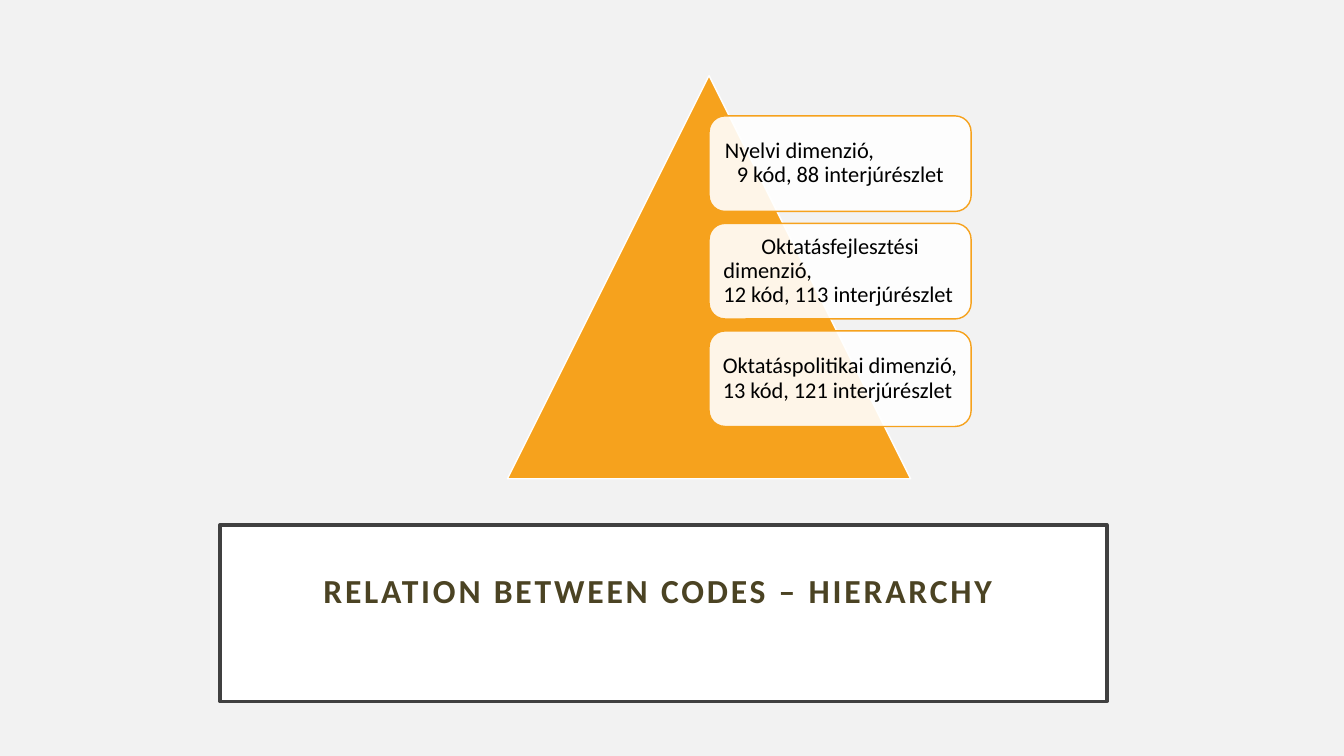
from lxml import etree
from pptx import Presentation
from pptx.dml.color import RGBColor
from pptx.enum.shapes import MSO_SHAPE
from pptx.enum.text import MSO_ANCHOR, MSO_AUTO_SIZE, PP_ALIGN
from pptx.oxml.ns import qn
from pptx.util import Pt

TRIANGLE, RECT, ROUNDED = MSO_SHAPE.ISOSCELES_TRIANGLE, MSO_SHAPE.RECTANGLE, MSO_SHAPE.ROUNDED_RECTANGLE
MIDDLE, NO_FIT = MSO_ANCHOR.MIDDLE, MSO_AUTO_SIZE.NONE
LEFT, CENTER = PP_ALIGN.LEFT, PP_ALIGN.CENTER

TITLE = "RELATION BETWEEN CODES – HIERARCHY"
DIMENSIONS = [
    {"lines": ["Nyelvi dimenzió,", "9 kód, 88 interjúrészlet"], "margin": 11.5, "indent": -8.5},
    {"lines": ["Oktatásfejlesztési", "dimenzió,", "12 kód, 113 interjúrészlet"], "margin": 2, "indent": 27},
    {"lines": ["Oktatáspolitikai dimenzió,", "13 kód, 121 interjúrészlet"], "margin": 1.5, "indent": 0},
]

THEME = {
    "font": "Calibri", "title_size": 24, "card_size": 16,
    "background": "F2F2F2", "white": "FFFFFF", "accent": "F6A21D",
    "frame": "404040", "title": "4B4323", "text": "000000",
}
SLIDE_W, SLIDE_H = 960, 540
TITLE_BOX = (157, 375, 633.6, 126)
TRIANGLE_BOX = (362.5, 54, 288, 288)
CARD_W, CARD_H, CARD_GAP = 187.2, 68.25, 8.55
CARD_LEFT = TRIANGLE_BOX[0] + TRIANGLE_BOX[2] / 2
CARD_TOP = 82.8


def color(name):
    return RGBColor.from_string(THEME[name])


def apply(obj, values):
    for name, value in values.items():
        setattr(obj, name, value)


def paint(sp, fill, line, width):
    sp.fill.solid()
    sp.fill.fore_color.rgb = color(fill)
    sp.line.color.rgb = color(line)
    sp.line.width = Pt(width)


def write(sp, text, align, size, ink, insets, bold=False):
    tf = sp.text_frame
    apply(tf, {"word_wrap": True, "auto_size": NO_FIT, "vertical_anchor": MIDDLE})
    sides = ("margin_left", "margin_top", "margin_right", "margin_bottom")
    apply(tf, {side: Pt(v) for side, v in zip(sides, insets)})
    p = tf.paragraphs[0]
    p.text = text
    apply(p, {"alignment": align, "line_spacing": 0.9, "space_before": Pt(0)})
    for r in p.runs:
        apply(r.font, {"name": THEME["font"], "size": Pt(THEME[size]), "bold": bold})
        r.font.color.rgb = color(ink)
    return p


def add_shape(s, kind, box, fill, line, width):
    sp = s.shapes.add_shape(kind, *map(Pt, box))
    sp.shadow.inherit = False
    paint(sp, fill, line, width)
    return sp


def add_title(s):
    sp = s.shapes.title
    apply(sp, dict(zip(("left", "top", "width", "height"), map(Pt, TITLE_BOX))))
    paint(sp, "white", "frame", 2.5)
    p = write(sp, TITLE, CENTER, "title_size", "title", (14.4, 14.4, 22, 44), True)
    p.runs[0].font._element.set("spc", "200")


def add_card(s, index, dimension):
    top = CARD_TOP + index * (CARD_H + CARD_GAP)
    sp = add_shape(s, ROUNDED, (CARD_LEFT, top, CARD_W, CARD_H), "white", "accent", 1)
    fill = sp._element.spPr.find(qn("a:solidFill"))
    etree.SubElement(fill[0], qn("a:alpha"), val="90000")
    p = write(sp, "\v".join(dimension["lines"]), LEFT, "card_size", "text", (5, 5, 5, 5))
    pPr = p._p.get_or_add_pPr()
    pPr.set("marL", str(Pt(dimension["margin"])))
    pPr.set("indent", str(Pt(dimension["indent"])))


def main():
    prs = Presentation()
    apply(prs, {"slide_width": Pt(SLIDE_W), "slide_height": Pt(SLIDE_H)})
    s = prs.slides.add_slide(prs.slide_layouts[5])
    s.background.fill.solid()
    s.background.fill.fore_color.rgb = color("background")
    add_title(s)
    add_shape(s, TRIANGLE, TRIANGLE_BOX, "accent", "white", 1)
    for index, dimension in enumerate(DIMENSIONS):
        add_card(s, index, dimension)
    prs.save("out.pptx")


if __name__ == "__main__":
    main()
